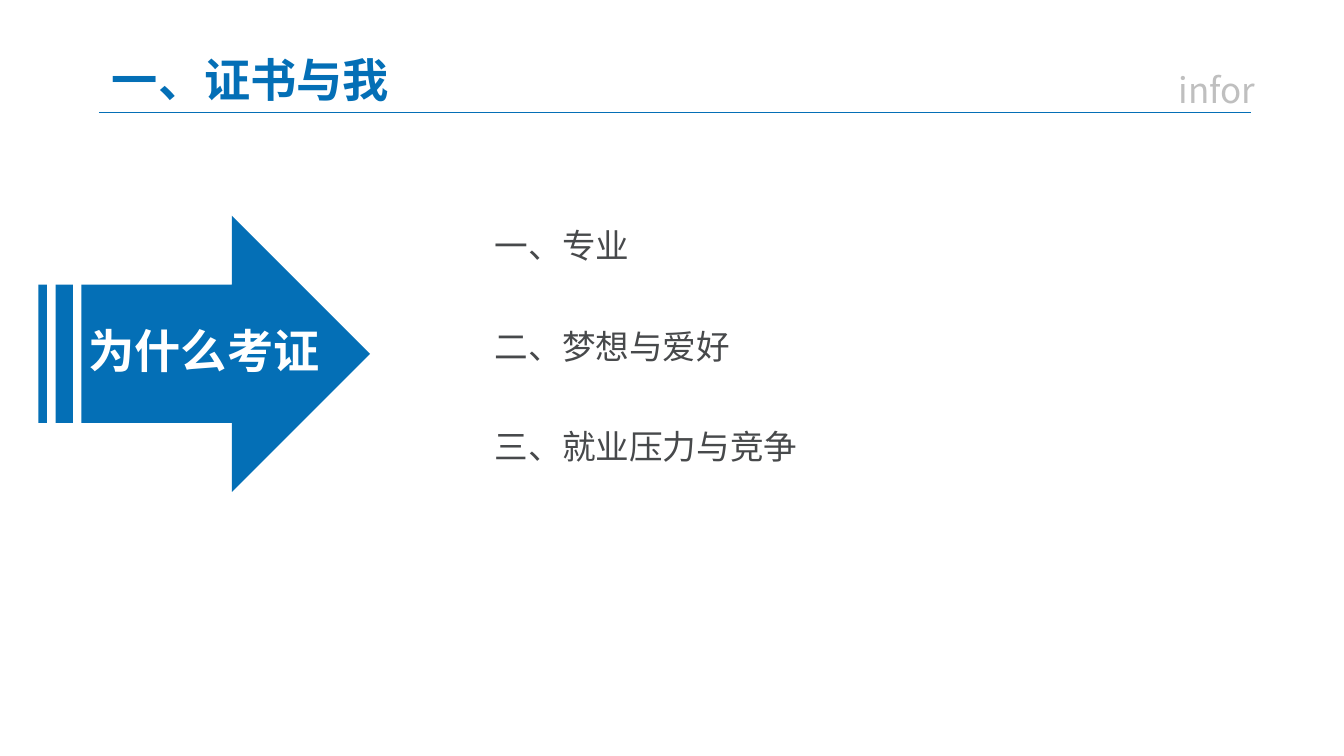
"""Build the slide on why to earn certificates."""
from lxml import etree
from pptx import Presentation
from pptx.dml.color import RGBColor
from pptx.enum import shapes, text
from pptx.oxml import ns
from pptx.util import Inches, Pt

FONT = "Noto Sans CJK SC"
COLORS = {"blue": "046FB6", "grey": "BFBFBF", "body": "47494B", "white": "FFFFFF"}
REASONS = ["一、专业", "二、梦想与爱好", "三、就业压力与竞争"]


def rgb(name):
    return RGBColor.from_string(COLORS[name])


def place(sp, left, top, width, height):
    sp.left, sp.top = Inches(left), Inches(top)
    sp.width, sp.height = Inches(width), Inches(height)


def write(sp, words, size, color, spacing=1.0, bold=False, wrap=True,
          anchor=text.MSO_ANCHOR.TOP):
    tf = sp.text_frame
    tf.word_wrap = wrap
    tf.auto_size = text.MSO_AUTO_SIZE.SHAPE_TO_FIT_TEXT
    tf.vertical_anchor = anchor
    p = tf.paragraphs[0]
    p.alignment = text.PP_ALIGN.LEFT
    p.line_spacing = spacing
    p.space_before = Pt(0)
    r = p.add_run()
    r.text = words
    r.font.size = Pt(size)
    r.font.bold = bold
    r.font.color.rgb = rgb(color)
    r.font.name = FONT
    etree.SubElement(r.font._element, ns.qn("a:ea"), typeface=FONT)


def write_heading(sp, words, color, wrap=False):
    write(sp, words, 33, color, 0.9, True, wrap, text.MSO_ANCHOR.MIDDLE)


def add_box(s, left, top, width, height):
    return s.shapes.add_textbox(Inches(left), Inches(top), Inches(width), Inches(height))


def add_rule(s, left, right, top):
    line = s.shapes.add_connector(shapes.MSO_CONNECTOR.STRAIGHT, Inches(left),
                                  Inches(top), Inches(right), Inches(top))
    line.line.color.rgb = rgb("blue")
    line.line.width = Pt(0.5)
    etree.SubElement(line._element.spPr, ns.qn("a:effectLst"))


def add_arrow(s, left, top, width, height):
    sp = s.shapes.add_shape(shapes.MSO_SHAPE.STRIPED_RIGHT_ARROW, Inches(left),
                            Inches(top), Inches(width), Inches(height))
    sp.shadow.inherit = False
    sp.fill.solid()
    sp.fill.fore_color.rgb = rgb("blue")
    sp.line.fill.background()


def main():
    prs = Presentation()
    prs.slide_width, prs.slide_height = Inches(13.33), Inches(7.5)
    s = prs.slides.add_slide(prs.slide_layouts[5])

    title = s.shapes.title
    place(title, 1.01, 0.52, 3.3, 0.6)
    write_heading(title, "一、证书与我", "blue", wrap=True)
    write(add_box(s, 11.59, 0.63, 1.7, 0.52), "infor", 25, "grey")
    add_rule(s, 0.98, 12.41, 1.11)

    add_arrow(s, 0.38, 2.14, 3.29, 2.74)
    write_heading(add_box(s, 0.78, 3.21, 2.49, 0.6), "为什么考证", "white")

    for i, reason in enumerate(REASONS):
        write(add_box(s, 4.81, 1.98 + i, 7.92, 0.71), reason, 24, "body", 1.5)

    prs.save("out.pptx")


if __name__ == "__main__":
    main()
